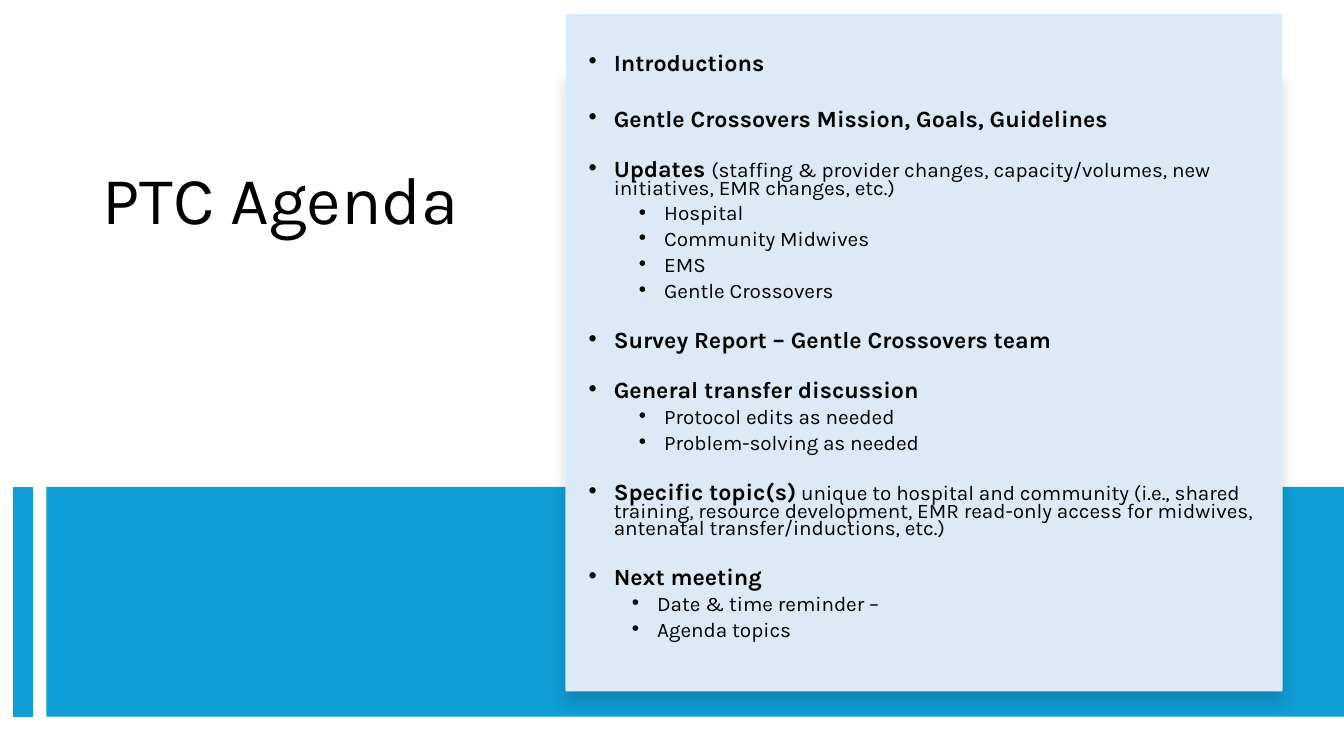
from dataclasses import dataclass

from lxml import etree
from pptx import Presentation
from pptx import util as u
from pptx.dml.color import RGBColor
from pptx.enum import shapes, text
from pptx.oxml import ns

WIDE, HIGH = u.Inches(13.33), u.Inches(7.5)


@dataclass(frozen=True)
class Theme:
    font: str = "Karla"
    ink: str = "000000"
    blue: str = "0F9ED5"
    pale: str = "DCEAF7"
    white: str = "FFFFFF"
    title: float = 48
    head: float = 16.6
    body: float = 14.8
    bar: float = 14


LOOK = Theme()

# Each topic: gap before in points, heading, detail, sub-item indent, sub-items
TOPICS = [
    (0, "Introductions", "", 0, []),
    (20, "Gentle Crossovers Mission, Goals, Guidelines", "", 0, []),
    (16, "Updates ",
     "(staffing & provider changes, capacity/volumes, new initiatives, EMR changes, etc.)",
     0.88, ["Hospital", "Community Midwives", "EMS", "Gentle Crossovers"]),
    (16, "Survey Report – Gentle Crossovers team", "", 0, []),
    (16, "General transfer discussion", "", 0.88,
     ["Protocol edits as needed", "Problem-solving as needed"]),
    (16, "Specific topic(s)",
     " unique to hospital and community (i.e., shared training, resource development, "
     "EMR read-only access for midwives, antenatal transfer/inductions, etc.)", 0, []),
    (16, "Next meeting", "", 0.81, ["Date & time reminder –", "Agenda topics"]),
]


def span(x, y, w, h):
    """Turn percentages of the slide into lengths."""
    return [int(side * part / 100) for side, part in zip((WIDE, HIGH) * 2, (x, y, w, h))]


def apply(item, form):
    for name, value in form.items():
        setattr(item, name, value)


def panel(slide, area, color):
    shape = slide.shapes.add_shape(shapes.MSO_SHAPE.RECTANGLE, *span(*area))
    shape.shadow.inherit = False
    shape.fill.solid()
    shape.fill.fore_color.rgb = RGBColor.from_string(color)
    shape.line.fill.background()
    return shape


def shade(shape):
    """Cast a soft shadow straight down."""
    glow = shape.element.spPr.find(ns.qn("a:effectLst"))
    cast = etree.SubElement(glow, ns.qn("a:outerShdw"), blurRad=str(u.Pt(11)),
                            dist=str(u.Pt(10)), dir="5400000", algn="t", rotWithShape="0")
    tint = etree.SubElement(cast, ns.qn("a:srgbClr"), val=LOOK.ink)
    etree.SubElement(tint, ns.qn("a:alpha"), val="15000")


def stripe(slide, x, top, end):
    left, start, _, stop = span(x, top, 0, end)
    line = slide.shapes.add_connector(shapes.MSO_CONNECTOR.STRAIGHT, left, start, left, stop)
    line.line.width = u.Pt(LOOK.bar)
    line.line.color.rgb = RGBColor.from_string(LOOK.blue)
    etree.SubElement(line.element.spPr, ns.qn("a:effectLst"))


def write(para, words, size, bold=False):
    run = para.add_run()
    run.text = words
    apply(run.font, {"name": LOOK.font, "size": u.Pt(size), "bold": bold})
    run.font.color.rgb = RGBColor.from_string(LOOK.ink)


def bullet(para, left, gap=0, level=0):
    apply(para, {"level": level, "alignment": text.PP_ALIGN.LEFT, "line_spacing": 0.7,
                 "space_before": u.Pt(gap), "space_after": u.Pt(6)})
    props = para._p.get_or_add_pPr()
    props.set("marL", str(u.Inches(left)))
    props.set("indent", str(u.Inches(-0.25)))
    etree.SubElement(props, ns.qn("a:buFont"), typeface="Arial")
    etree.SubElement(props, ns.qn("a:buChar"), char="•")


def title(slide, words, area):
    box = slide.shapes.title
    apply(box, dict(zip(("left", "top", "width", "height"), span(*area))))
    apply(box.text_frame, {"word_wrap": True, "vertical_anchor": text.MSO_ANCHOR.TOP})
    para = box.text_frame.paragraphs[0]
    apply(para, {"alignment": text.PP_ALIGN.CENTER, "line_spacing": 0.9})
    write(para, words, LOOK.title)


def agenda(shape):
    frame = shape.text_frame
    apply(frame, {"word_wrap": True, "vertical_anchor": text.MSO_ANCHOR.TOP,
                  "margin_top": u.Inches(0.41)})
    for rank, (gap, head, detail, left, items) in enumerate(TOPICS):
        para = frame.add_paragraph() if rank else frame.paragraphs[0]
        bullet(para, 0.38, gap)
        write(para, head, LOOK.head, True)
        if detail:
            write(para, detail, LOOK.body)
        for item in items:
            para = frame.add_paragraph()
            bullet(para, left, level=1)
            write(para, item, LOOK.body)


def main():
    deck = Presentation()
    apply(deck, {"slide_width": WIDE, "slide_height": HIGH})
    slide = deck.slides.add_slide(deck.slide_layouts[5])

    # Heading and blue footer band
    title(slide, "PTC Agenda", (5.33, 21.33, 31.13, 39.2))
    panel(slide, (3.45, 64.4, 96.55, 30.4), LOOK.blue)
    stripe(slide, 1.73, 64.4, 94.8)

    # Agenda card over its shadow
    shade(panel(slide, (42.08, 8.53, 53.34, 82.8), LOOK.white))
    agenda(panel(slide, (42.08, 1.87, 53.34, 89.6), LOOK.pale))

    deck.save("out.pptx")


if __name__ == "__main__":
    main()
